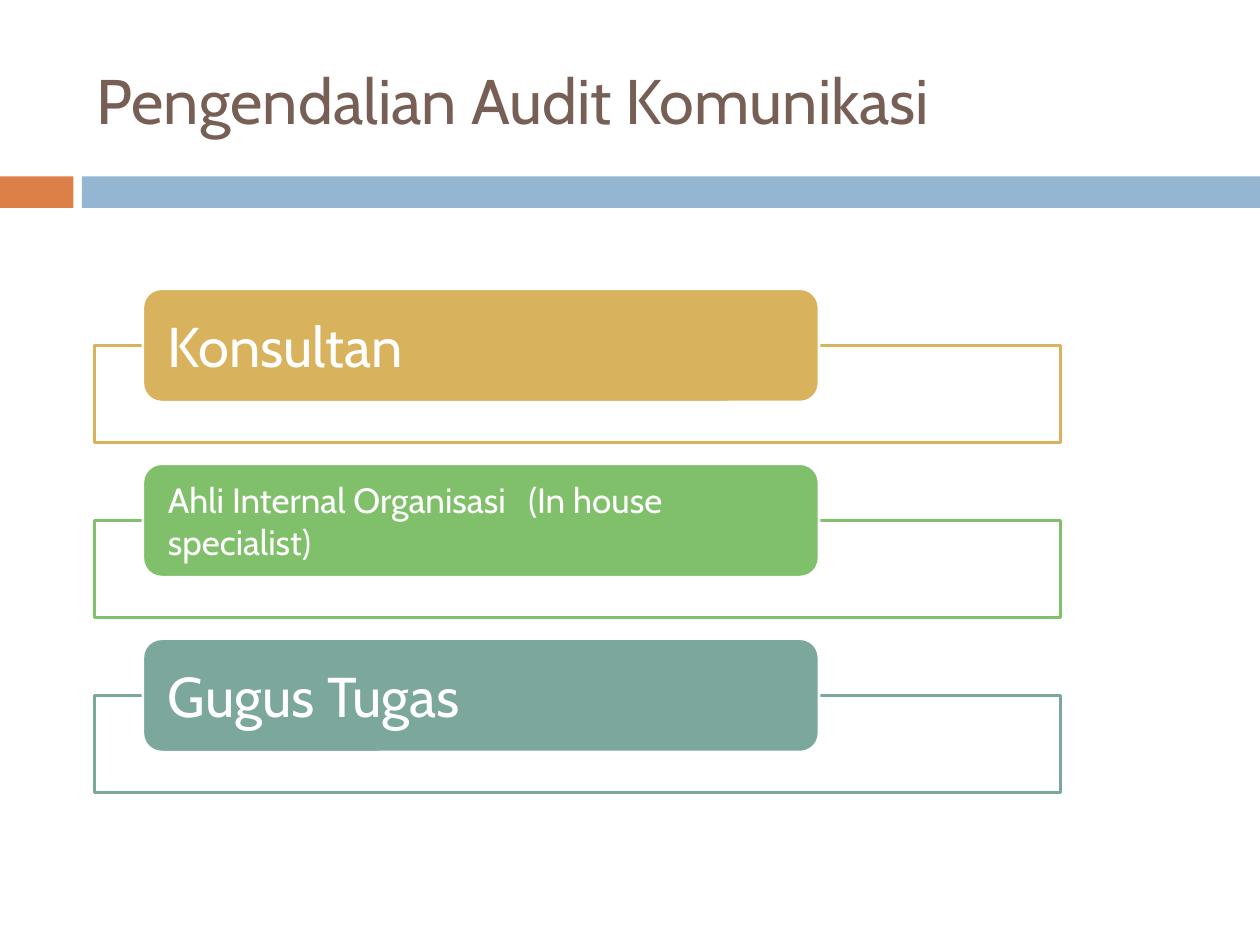
from lxml import etree
from pptx import Presentation
from pptx.dml.color import RGBColor
from pptx.enum import shapes, text
from pptx.oxml import ns
from pptx.util import Pt

FONT = "Cabin"
COLORS = {
    "title": "775F55",
    "orange": "DD8047",
    "blue": "94B6D2",
    "gold": "D8B25C",
    "green": "81C06B",
    "teal": "7BA79D",
    "white": "FFFFFF",
}
ITEMS = [
    ("Konsultan", "gold", 32, None),
    ("Ahli Internal Organisasi\t(In house specialist)", "green", 20, 206),
    ("Gugus Tugas", "teal", 32, None),
]


def color(name):
    return RGBColor.from_string(COLORS[name])


def write(shape, content, size, ink, side_inset=7.2, edge_inset=3.6, tab_stop=None):
    frame = shape.text_frame
    frame.word_wrap = True
    frame.auto_size = text.MSO_AUTO_SIZE.NONE
    frame.vertical_anchor = text.MSO_ANCHOR.MIDDLE
    frame.margin_left = frame.margin_right = Pt(side_inset)
    frame.margin_top = frame.margin_bottom = Pt(edge_inset)
    paragraph = frame.paragraphs[0]
    paragraph.alignment = text.PP_ALIGN.LEFT
    if tab_stop:
        properties = paragraph._p.get_or_add_pPr()
        tabs = etree.SubElement(properties, ns.qn("a:tabLst"))
        etree.SubElement(tabs, ns.qn("a:tab"), pos=str(Pt(tab_stop)), algn="l")
    run = paragraph.add_run()
    run.text = content
    run.font.name = FONT
    run.font.size = Pt(size)
    run.font.color.rgb = color(ink)


def add_box(slide, kind, left, top, width, height, fill, line=None):
    shape = slide.shapes.add_shape(kind, Pt(left), Pt(top), Pt(width), Pt(height))
    shape.shadow.inherit = False
    shape.fill.solid()
    shape.fill.fore_color.rgb = color(fill)
    if line:
        shape.line.color.rgb = color(line)
        shape.line.width = Pt(1.5)
    else:
        shape.line.fill.background()
    return shape


def add_title(slide, left, top, width, height):
    title = slide.shapes.title
    title.left, title.top = Pt(left), Pt(top)
    title.width, title.height = Pt(width), Pt(height)
    write(title, "Pengendalian Audit Komunikasi", 36, "title")


def add_band(slide, left, top, width, height):
    accent, gap = 42, 4.8
    rectangle = shapes.MSO_SHAPE.RECTANGLE
    add_box(slide, rectangle, left, top, accent, height, "orange")
    add_box(slide, rectangle, left + accent + gap, top, width - accent - gap, height, "blue")


def add_list(slide, left, top, width, pitch):
    tab_height, frame_height = 64.8, 55.4
    for index, (label, tint, size, tab_stop) in enumerate(ITEMS):
        row_top = top + index * pitch
        add_box(slide, shapes.MSO_SHAPE.RECTANGLE, left, row_top + tab_height / 2,
                width, frame_height, "white", tint)
        header = add_box(slide, shapes.MSO_SHAPE.ROUNDED_RECTANGLE, left + 27.6, row_top,
                         width * 0.7, tab_height, tint, "white")
        write(header, label, size, "white", side_inset=11.2, edge_inset=0, tab_stop=tab_stop)


def main():
    presentation = Presentation()
    presentation.slide_width, presentation.slide_height = Pt(720), Pt(540)
    slide = presentation.slides.add_slide(presentation.slide_layouts[5])
    add_band(slide, 0, 100.8, 720, 18)
    add_title(slide, 48, 18, 642, 78)
    add_list(slide, 54, 165, 552, 100)
    presentation.save("out.pptx")


if __name__ == "__main__":
    main()
